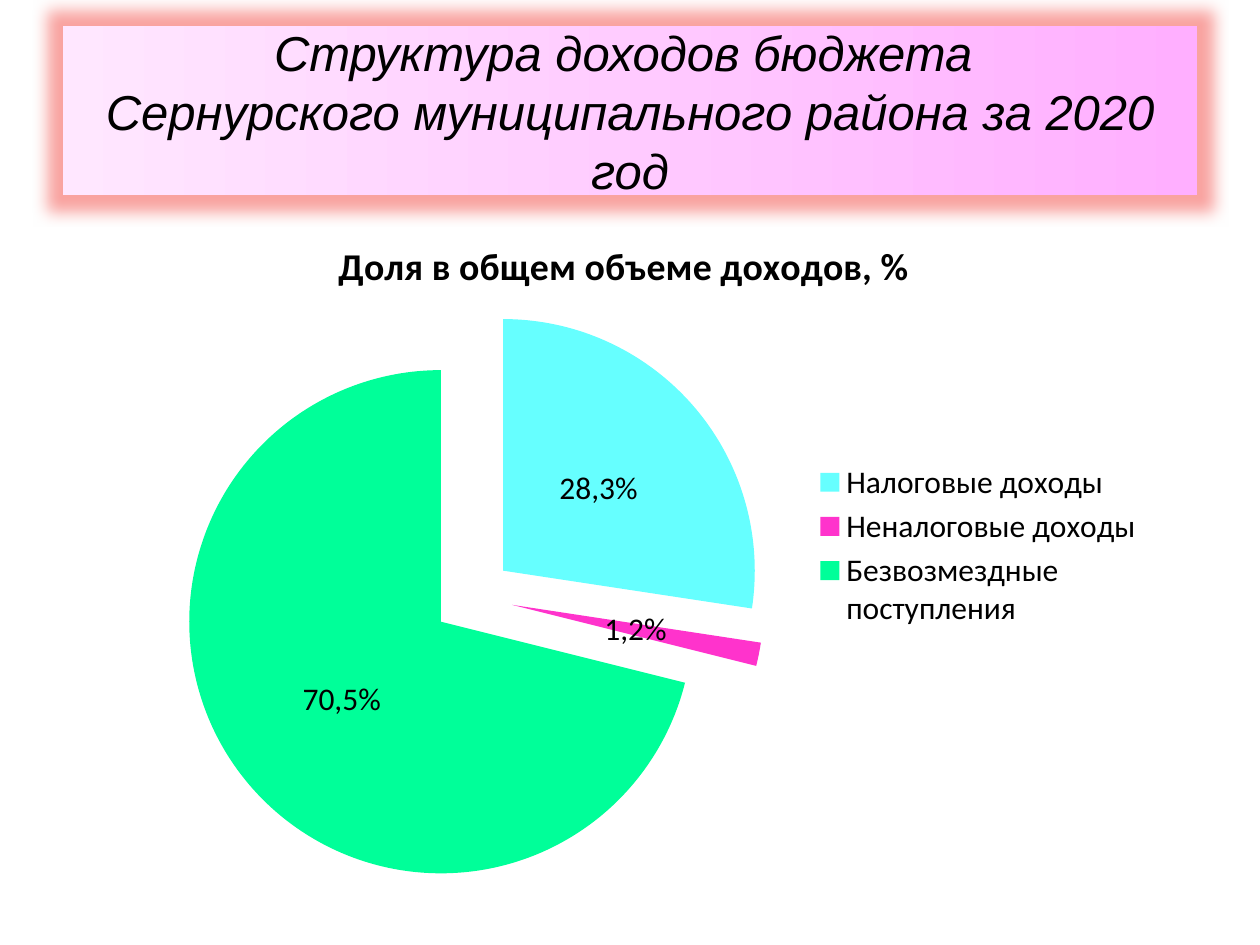
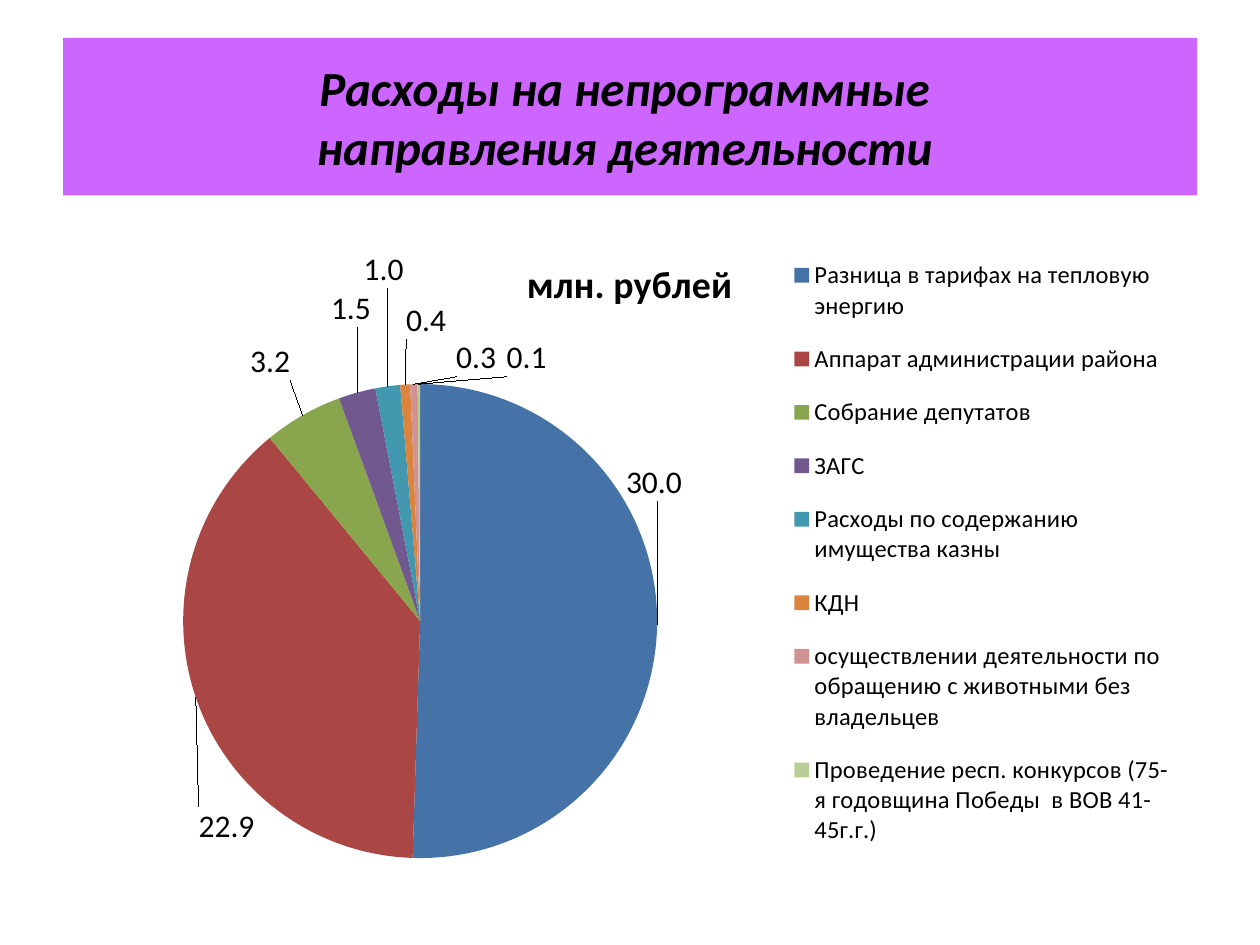
from lxml import etree
from pptx import Presentation
from pptx.chart.data import CategoryChartData
from pptx.dml.color import RGBColor
from pptx.enum.chart import XL_CHART_TYPE, XL_LABEL_POSITION as LabelPos, XL_LEGEND_POSITION
from pptx.enum.text import MSO_ANCHOR, MSO_AUTO_SIZE, PP_ALIGN
from pptx.oxml.ns import qn
from pptx.util import Inches, Pt

COLORS = {
    "text": "000000", "band": "CC66FF", "band_light": "FFE7FF", "band_dark": "FFAFFF",
    "glow": "F9A3A0",
    "cyan": "66FFFF", "magenta": "FF33CC", "mint": "00FF99",
    "blue": "4572A7", "red": "AA4643", "green": "89A54E", "purple": "71588F",
    "teal": "4198AF", "orange": "DB843D", "pale_blue": "93A9CF",
    "pale_red": "D19392", "pale_green": "B9CD96",
}
LAYOUT_PREDECESSORS = {qn(t) for t in ("c:tx", "c:idx", "c:legendPos", "c:legendEntry")}


def rgb(name):
    return RGBColor.from_string(COLORS[name])


def style_font(font, size=18, name="Calibri", bold=False, italic=False):
    font.size, font.name, font.bold, font.italic = Pt(size), name, bold, italic
    font.color.rgb = rgb("text")


def write(tf, text, align=None, **fmt):
    """Fill a text frame, one paragraph per line, in one format."""
    tf.text = text
    for p in tf.paragraphs:
        if align is not None:
            p.alignment = align
        for r in p.runs:
            style_font(r.font, **fmt)


def sub(parent, tag, **attrs):
    return etree.SubElement(parent, qn(tag), attrs)


def set_layout(parent, inner=False, edge=True, **lengths):
    """Place a chart part by percentages of the chart (x, y, w, h)."""
    for old in parent.findall(qn("c:layout")):
        parent.remove(old)
    layout = etree.Element(qn("c:layout"))
    manual = sub(layout, "c:manualLayout")
    if inner:
        sub(manual, "c:layoutTarget", val="inner")
    if edge:
        sub(manual, "c:xMode", val="edge")
        sub(manual, "c:yMode", val="edge")
    for key, percent in lengths.items():
        sub(manual, f"c:{key}", val=f"{percent / 100:.3f}")
    parent.insert(sum(child.tag in LAYOUT_PREDECESSORS for child in parent), layout)


def add_title(slide, text, box, **fmt):
    title = slide.shapes.title
    title.left, title.top, title.width, title.height = map(Inches, box)
    tf = title.text_frame
    tf.word_wrap, tf.auto_size = True, MSO_AUTO_SIZE.NONE
    tf.vertical_anchor = MSO_ANCHOR.MIDDLE
    write(tf, text, align=PP_ALIGN.CENTER, size=28, italic=True, **fmt)
    return title


def add_pie(slide, box, name, slices, number_format, plot, title, legend, legend_size=18):
    """Pie chart; slices are (category, value, colour), the rest are layouts."""
    data = CategoryChartData(number_format=number_format)
    data.categories = [category for category, _, _ in slices]
    data.add_series(name, [value for _, value, _ in slices])
    chart = slide.shapes.add_chart(XL_CHART_TYPE.PIE, *map(Inches, box), data).chart
    style_font(chart.font)

    # Heading and legend
    chart.has_title = True
    write(chart.chart_title.text_frame, name, size=21.6, bold=True)
    chart.has_legend = True
    chart.legend.position = XL_LEGEND_POSITION.RIGHT
    chart.legend.include_in_layout = False
    style_font(chart.legend.font, size=legend_size)

    # Slices
    pie = chart.plots[0]
    pie.vary_by_categories = True
    series = pie.series[0]
    for i, (_, _, color) in enumerate(slices):
        fill = series.points[i].format.fill
        fill.solid()
        fill.fore_color.rgb = rgb(color)

    # Labels
    labels = series.data_labels
    labels.show_value = True
    labels.number_format, labels.number_format_is_linked = number_format, False
    style_font(labels.font)

    for part, lengths in (("c:title", title), ("c:legend", legend)):
        set_layout(chart.element.xpath(f"c:chart/{part}")[0], **lengths)
    set_layout(chart.element.xpath("c:chart/c:plotArea")[0], inner=True, **plot)
    return chart


def income_slide(prs):
    slide = prs.slides.add_slide(prs.slide_layouts[5])
    title = add_title(
        slide, "Структура доходов бюджета \nСернурского муниципального района за 2020 год",
        (0.5, 0.21, 9, 1.34), name="Arial")
    title.fill.gradient()
    title.fill.gradient_angle = 0
    for stop, color in zip(title.fill.gradient_stops, ("band_light", "band_dark")):
        stop.color.rgb = rgb(color)
    effects = sub(title.element.spPr, "a:effectLst")
    glow = sub(effects, "a:glow", rad=str(Pt(18)))
    sub(glow, "a:srgbClr", val=COLORS["glow"])

    slices = [("Налоговые доходы", 0.274, "cyan"),
              ("Неналоговые доходы", 0.015, "magenta"),
              ("Безвозмездные поступления", 0.711, "mint")]
    chart = add_pie(
        slide, (0.59, 1.53, 8.58, 5.61), "Доля в общем объеме доходов, %", slices, "0.0%",
        plot=dict(x=5.6, y=15.9, w=62.5, h=82.6),
        title=dict(x=23.8, y=5.6), legend=dict(x=68.1, y=37.4, w=31, h=25))
    series = chart.plots[0].series[0]
    for i, text in enumerate(("28,3%", "1,2%", "70,5%")):
        label = series.points[i].data_label
        write(label.text_frame, text)
        label.position = LabelPos.CENTER

    # Pull the slices apart
    explosion = etree.Element(qn("c:explosion"), val="16")
    chart.element.xpath(".//c:ser/c:dPt")[0].addprevious(explosion)


def expenses_slide(prs):
    slide = prs.slides.add_slide(prs.slide_layouts[5])
    title = add_title(slide, "Расходы на непрограммные \vнаправления деятельности ",
                      (0.5, 0.3, 9, 1.25), bold=True)
    title.fill.solid()
    title.fill.fore_color.rgb = rgb("band")

    slices = [
        ("Разница в тарифах на тепловую энергию", 30, "blue"),
        ("Аппарат администрации района", 22.9, "red"),
        ("Собрание депутатов", 3.2, "green"),
        ("ЗАГС", 1.5, "purple"),
        ("Расходы по содержанию имущества казны", 1, "teal"),
        ("КДН", 0.4, "orange"),
        ("", None, "pale_blue"),
        ("осуществлении деятельности по обращению с животными без владельцев", 0.3, "pale_red"),
        ("Проведение респ. конкурсов (75-я годовщина Победы  в ВОВ 41-45г.г.)", 0.1, "pale_green"),
    ]
    chart = add_pie(
        slide, (0.5, 1.83, 9, 5.12), "млн. рублей", slices, "0.0", legend_size=14,
        plot=dict(x=10.6, y=23.8, w=41.8, h=73.5),
        title=dict(x=40.3, y=3.1), legend=dict(x=64, y=1, w=34, h=98))

    # The category without a value stays out of the legend
    entry = etree.Element(qn("c:legendEntry"))
    sub(entry, "c:idx", val="6")
    sub(entry, "c:delete", val="1")
    chart.element.xpath(".//c:legend/c:legendPos")[0].addnext(entry)

    # Label shifts from the outer end of each slice, in percent
    shifts = {0: (-3.4, -22.1), 1: (5.8, 16.6), 2: (-0.8, -4.4), 3: (1.4, -9),
              4: (1.5, -14.1), 5: (1.9, -5.9), 7: (5.5, 0), 8: (9.5, 0)}
    series = chart.plots[0].series[0]
    for i, (x, y) in shifts.items():
        label = series.points[i].data_label
        style_font(label.font)
        label.position = LabelPos.OUTSIDE_END
        dLbl = chart.element.xpath(f".//c:dLbl[c:idx/@val='{i}']")[0]
        set_layout(dLbl, edge=False, x=x, y=y)


def main():
    prs = Presentation()
    prs.slide_width, prs.slide_height = Inches(10), Inches(7.5)
    income_slide(prs)
    expenses_slide(prs)
    prs.save("out.pptx")


if __name__ == "__main__":
    main()
